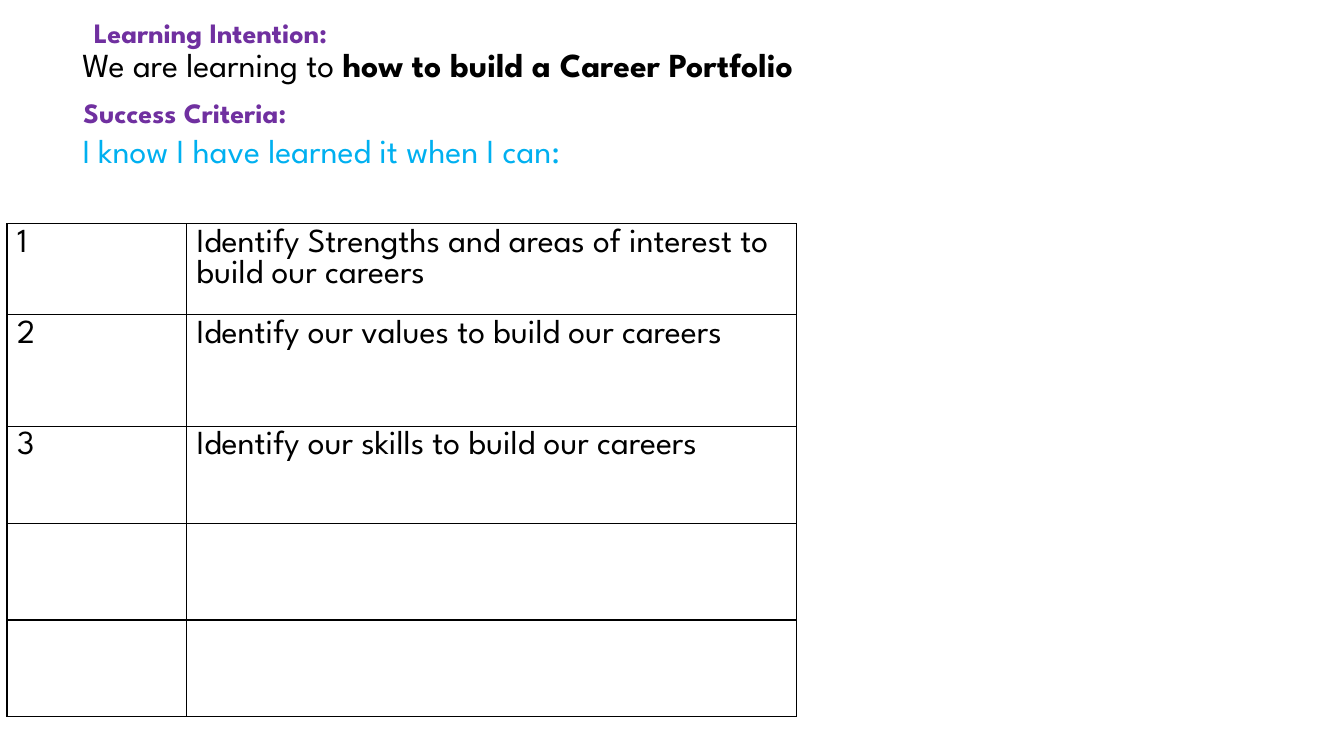
from typing import NamedTuple

from lxml.etree import SubElement
from pptx import Presentation
from pptx.dml.color import RGBColor
from pptx.enum.text import MSO_ANCHOR, MSO_AUTO_SIZE, PP_ALIGN
from pptx.oxml.ns import qn
from pptx.util import Inches, Pt

FONT = "League Spartan"
COLORS = {"ink": "000000", "heading": "7030A0", "prompt": "00B0F0"}


class Run(NamedTuple):
    text: str
    bold: bool = False


class Line(NamedTuple):
    left: float
    top: float
    width: float
    height: float
    size: int
    color: str
    runs: list[Run]


TITLE = Line(0.83, 0.1, 2.8, 0.44, 20, "heading", [Run("Learning Intention:", True)])
LINES = [
    Line(0.72, 0.39, 12.64, 0.5, 24, "ink",
         [Run("We are learning to "), Run("how to build a Career Portfolio", True)]),
    Line(0.72, 1.24, 11.89, 0.5, 24, "prompt",
         [Run("I know I have learned it when I can:")]),
    Line(0.73, 0.9, 2.8, 0.44, 20, "heading", [Run("Success Criteria:", True)]),
]
COL_WIDTHS = [1.78, 6.05]
ROW_HEIGHTS = [0.81, 1.11, 0.96, 0.96, 0.96]
CRITERIA = [
    "Identify Strengths and areas of interest to build our careers",
    "Identify our values to build our careers",
    "Identify our skills to build our careers",
]


def add_text(p, text: str, *, size: int = 24, color: str = "ink", bold: bool = False) -> None:
    r = p.add_run()
    r.text = text
    r.font.name = FONT
    r.font.size = Pt(size)
    r.font.bold = bold
    r.font.color.rgb = RGBColor.from_string(COLORS[color])


def fill_line(sp, line: Line) -> None:
    sp.left, sp.top = Inches(line.left), Inches(line.top)
    sp.width, sp.height = Inches(line.width), Inches(line.height)
    tf = sp.text_frame
    tf.word_wrap = True
    tf.auto_size = MSO_AUTO_SIZE.SHAPE_TO_FIT_TEXT
    tf.vertical_anchor = MSO_ANCHOR.TOP
    p = tf.paragraphs[0]
    p.alignment = PP_ALIGN.LEFT
    for run in line.runs:
        add_text(p, run.text, size=line.size, color=line.color, bold=run.bold)


def format_cell(cell) -> None:
    pr = cell._tc.get_or_add_tcPr()
    for side in ("lnL", "lnR", "lnT", "lnB"):
        ln = SubElement(pr, qn(f"a:{side}"), w=str(Pt(1)))
        fill = SubElement(ln, qn("a:solidFill"))
        SubElement(fill, qn("a:srgbClr"), val=COLORS["ink"])
    cell.fill.background()


def add_criteria(s) -> None:
    frame = s.shapes.add_table(len(ROW_HEIGHTS), len(COL_WIDTHS), Inches(0.07),
                               Inches(2.22), Inches(7.83), Inches(4.89))
    table = frame.table
    table.first_row = table.horz_banding = False
    for col, width in zip(table.columns, COL_WIDTHS):
        col.width = Inches(width)
    for row, height in zip(table.rows, ROW_HEIGHTS):
        row.height = Inches(height)
    frame.height = Inches(4.89)
    for cell in table.iter_cells():
        format_cell(cell)
    for i, text in enumerate(CRITERIA):
        for j, value in enumerate((str(i + 1), text)):
            add_text(table.cell(i, j).text_frame.paragraphs[0], value)


def main() -> None:
    """Build the learning intention slide."""
    prs = Presentation()
    prs.slide_width, prs.slide_height = Inches(13.33), Inches(7.5)
    s = prs.slides.add_slide(prs.slide_layouts[5])
    fill_line(s.shapes.title, TITLE)
    for line in LINES:
        box = s.shapes.add_textbox(0, 0, Inches(line.width), Inches(line.height))
        fill_line(box, line)
    add_criteria(s)
    prs.save("out.pptx")


if __name__ == "__main__":
    main()
